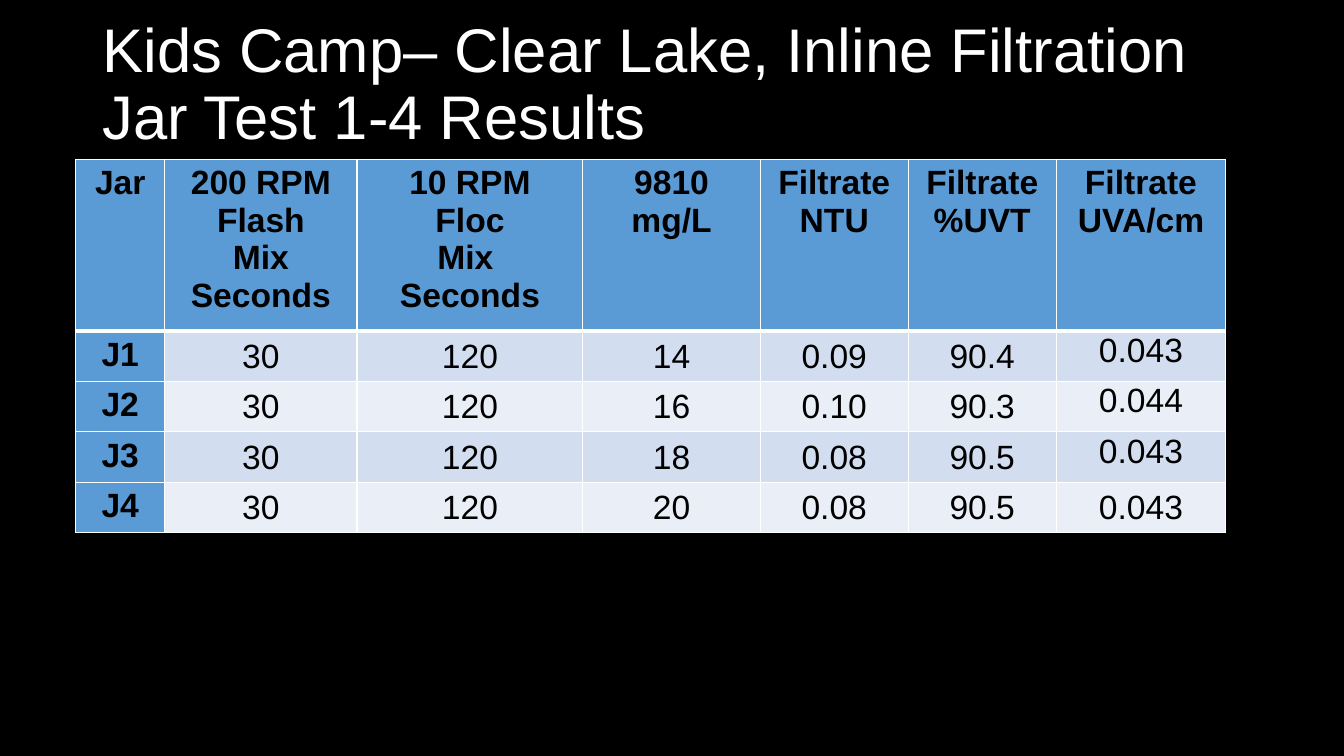
"""Builds the jar test results slide."""
import pptx
import pptx.dml.color
import pptx.enum.text
import pptx.oxml
import pptx.oxml.ns
import pptx.util
import lxml.etree

Cm = pptx.util.Cm
Pt = pptx.util.Pt
Align = pptx.enum.text.PP_ALIGN
Anchor = pptx.enum.text.MSO_ANCHOR

COLORS = {"back": "000000", "title": "FFFFFF", "text": "000000", "line": "FFFFFF",
          "head": "5B9BD5", "odd": "D2DEEF", "even": "EAEFF7"}
HEADS = ["Jar", "200 RPM\nFlash\nMix\nSeconds", "10 RPM\nFloc\nMix \nSeconds",
         "9810\nmg/L", "Filtrate\nNTU", "Filtrate\n%UVT", "Filtrate\nUVA/cm"]
JARS = [["J1", "30", "120", "14", "0.09", "90.4", "0.043"],
        ["J2", "30", "120", "16", "0.10", "90.3", "0.044"],
        ["J3", "30", "120", "18", "0.08", "90.5", "0.043"],
        ["J4", "30", "120", "20", "0.08", "90.5", "0.043"]]
WIDTHS = [2.24, 4.85, 5.69, 4.47, 3.73, 3.73, 4.27]
HEAD_HIGH, ROW_HIGH = 4.02, 1.2


class Deck:
    """Holds the style and the current slide."""

    def __init__(self, show, font):
        self.font = font
        self.slide = show.slides.add_slide(show.slide_layouts[6])
        self.paint(self.slide.background.fill, "back")

    def color(self, name):
        return pptx.dml.color.RGBColor.from_string(COLORS[name])

    def paint(self, fill, name):
        fill.solid()
        fill.fore_color.rgb = self.color(name)

    def style(self, frame, size, name, bold=False, align=Align.LEFT):
        for para in frame.paragraphs:
            para.alignment = align
            for run in para.runs:
                run.font.name = self.font
                run.font.size = Pt(size)
                run.font.bold = bold
                run.font.color.rgb = self.color(name)

    def title(self, text, left, top, width, height):
        box = self.slide.shapes.add_textbox(Cm(left), Cm(top), Cm(width), Cm(height))
        frame = box.text_frame
        frame.word_wrap = True
        frame.vertical_anchor = Anchor.MIDDLE
        frame.text = text
        frame.paragraphs[0].line_spacing = 0.9
        self.style(frame, 44, "title")

    def border(self, cell, side, points):
        props = cell._tc.get_or_add_tcPr()
        line = lxml.etree.SubElement(props, pptx.oxml.ns.qn("a:ln" + side), w=str(Pt(points)))
        fill = lxml.etree.SubElement(line, pptx.oxml.ns.qn("a:solidFill"))
        lxml.etree.SubElement(fill, pptx.oxml.ns.qn("a:srgbClr"), val=COLORS["line"])

    def cell(self, cell, text, row, col, last):
        label = row == 0 or col == 0
        for side in "LRTB":
            thick = (row, side) in ((0, "B"), (1, "T"))
            self.border(cell, side, 3 if thick else 1)
        self.paint(cell.fill, "head" if label else "odd" if row % 2 else "even")
        cell.text_frame.text = text
        self.style(cell.text_frame, 24, "text", label, Align.CENTER)
        if not label:
            cell.margin_left = cell.margin_right = cell.margin_top = Cm(0.02)
            cell.margin_bottom = 0
            high = col == len(WIDTHS) - 1 and not last
            cell.vertical_anchor = Anchor.TOP if high else Anchor.MIDDLE

    def table(self, rows, left, top):
        high = HEAD_HIGH + ROW_HIGH * (len(rows) - 1)
        frame = self.slide.shapes.add_table(len(rows), len(WIDTHS), Cm(left), Cm(top),
                                            Cm(sum(WIDTHS)), Cm(high))
        grid = frame.table
        for col, width in enumerate(WIDTHS):
            grid.columns[col].width = Cm(width)
        for row, texts in enumerate(rows):
            grid.rows[row].height = Cm(ROW_HIGH if row else HEAD_HIGH)
            for col, text in enumerate(texts):
                self.cell(grid.cell(row, col), text, row, col, row == len(rows) - 1)


def main():
    show = pptx.Presentation()
    show.slide_width, show.slide_height = Cm(33.87), Cm(19.05)
    deck = Deck(show, "Arial")
    deck.title("Kids Camp– Clear Lake, Inline Filtration\vJar Test 1-4 Results",
               2.33, 0.33, 29.21, 3.68)
    deck.table([HEADS] + JARS, 1.91, 4.02)
    show.save("out.pptx")


if __name__ == "__main__":
    main()
